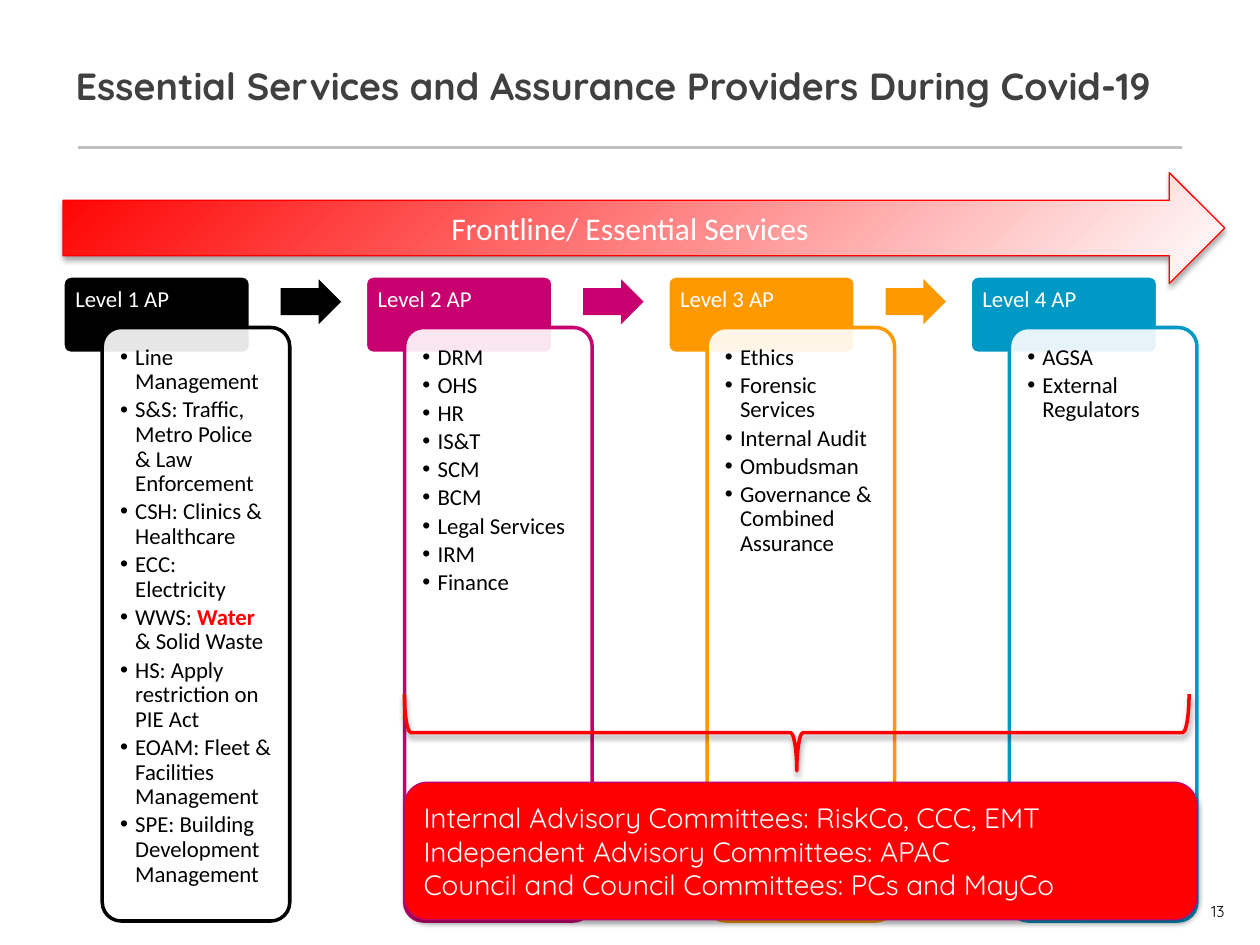
from dataclasses import dataclass

from pptx import Presentation
from pptx.dml.color import RGBColor
from pptx.enum.shapes import MSO_CONNECTOR, MSO_SHAPE
from pptx.enum.text import MSO_ANCHOR, MSO_AUTO_SIZE, PP_ALIGN
from pptx.oxml import parse_xml
from pptx.oxml.ns import nsdecls, qn
from pptx.util import Inches, Pt


@dataclass(frozen=True)
class Theme:
    body_font: str = "Calibri"
    display_font: str = "Quicksand"
    title_size: float = 21.6
    arrow_size: float = 18
    banner_size: float = 16
    body_size: float = 13
    number_size: float = 9
    white: str = "FFFFFF"
    black: str = "000000"
    title: str = "404040"
    rule: str = "BFBFBF"
    red: str = "FF0000"
    banner_line: str = "C4006D"
    levels: tuple = ("000000", "C8006F", "FF9900", "0098C5")


@dataclass(frozen=True)
class Box:
    left: float
    top: float
    width: float
    height: float

    def share(self, left, top, width, height):
        return Box(self.left + left * self.width, self.top + top * self.height,
                   width * self.width, height * self.height)

    def emu(self):
        return [Inches(side) for side in (self.left, self.top, self.width, self.height)]


THEME = Theme()
COLUMN_PITCH = 2.4
CARD_WIDTH = 0.62
LABEL_HEIGHT = 0.08
STEP_HEIGHT = 0.07

LEVELS = [
    ("Level 1 AP", [
        "Line Management",
        "S&S: Traffic, Metro Police & Law Enforcement",
        "CSH: Clinics & Healthcare",
        "ECC: Electricity",
        [("WWS: ", {}), ("Water ", {"color": THEME.red, "bold": True}), ("& Solid Waste", {})],
        "HS: Apply restriction on PIE Act",
        "EOAM: Fleet & Facilities Management",
        "SPE: Building Development Management",
    ]),
    ("Level 2 AP", ["DRM", "OHS", "HR", "IS&T", "SCM", "BCM", "Legal Services", "IRM", "Finance"]),
    ("Level 3 AP", ["Ethics", "Forensic Services", "Internal Audit", "Ombudsman",
                    "Governance & Combined Assurance"]),
    ("Level 4 AP", ["AGSA", "External Regulators"]),
]

COMMITTEES = [
    "Internal Advisory Committees: RiskCo, CCC, EMT",
    "Independent Advisory Committees: APAC",
    "Council and Council Committees: PCs and MayCo",
]


def add_bullet(paragraph):
    properties = paragraph._p.get_or_add_pPr()
    properties.set("marL", str(Inches(0.12)))
    properties.set("indent", str(-Inches(0.12)))
    properties.append(parse_xml(f'<a:buFont {nsdecls("a")} typeface="Arial"/>'))
    properties.append(parse_xml(f'<a:buChar {nsdecls("a")} char="•"/>'))


def write_text(shape, paragraphs, size, color, font=THEME.body_font, bold=False,
               align=PP_ALIGN.LEFT, anchor=MSO_ANCHOR.TOP, insets=(0.1, 0.05, 0.1, 0.05),
               bullets=False, line_spacing=None, space_after=None):
    frame = shape.text_frame
    frame.word_wrap = True
    frame.auto_size = MSO_AUTO_SIZE.NONE
    frame.vertical_anchor = anchor
    (frame.margin_left, frame.margin_top,
     frame.margin_right, frame.margin_bottom) = [Inches(inset) for inset in insets]
    for index, content in enumerate(paragraphs):
        paragraph = frame.add_paragraph() if index else frame.paragraphs[0]
        if bullets:
            add_bullet(paragraph)
        paragraph.alignment = align
        paragraph.line_spacing = line_spacing
        paragraph.space_after = space_after
        for text, changes in [(content, {})] if isinstance(content, str) else content:
            run = paragraph.add_run()
            run.text = text
            run.font.name = font
            run.font.size = Pt(size)
            run.font.bold = changes.get("bold", bold)
            run.font.color.rgb = RGBColor.from_string(changes.get("color", color))


def add_panel(slide, kind, box, fill=None, opacity=100, line=None, line_width=2,
              adjustments=(), shadow=None):
    shape = slide.shapes.add_shape(kind, *box.emu())
    shape.shadow.inherit = False
    for index, value in enumerate(adjustments):
        shape.adjustments[index] = value
    if fill:
        shape.fill.solid()
        shape.fill.fore_color.rgb = RGBColor.from_string(fill)
        if opacity < 100:
            color = shape._element.spPr.find(qn("a:solidFill"))[0]
            color.append(parse_xml(f'<a:alpha {nsdecls("a")} val="{opacity * 1000}"/>'))
    else:
        shape.fill.background()
    if line:
        shape.line.color.rgb = RGBColor.from_string(line)
        shape.line.width = Pt(line_width)
    else:
        shape.line.fill.background()
    if shadow:
        shape._element.spPr.find(qn("a:effectLst")).append(parse_xml(
            f'<a:outerShdw {nsdecls("a")} blurRad="{Pt(3.1)}" dist="{Pt(1.8)}" dir="5400000" '
            f'rotWithShape="0"><a:srgbClr val="{THEME.black}"><a:alpha val="{shadow * 1000}"/>'
            '</a:srgbClr></a:outerShdw>'))
    return shape


def add_heading(slide, box):
    title = slide.shapes.title
    title.left, title.top, title.width, title.height = box.share(0, 0, 1, 0.87).emu()
    write_text(title, ["Essential Services and Assurance Providers During Covid-19"],
               THEME.title_size, THEME.title, font=THEME.display_font, bold=True,
               anchor=MSO_ANCHOR.MIDDLE)
    inset = 0.12
    height = Inches(box.top + box.height)
    rule = slide.shapes.add_connector(MSO_CONNECTOR.STRAIGHT, Inches(box.left + inset), height,
                                      Inches(box.left + box.width - inset), height)
    rule.line.color.rgb = RGBColor.from_string(THEME.rule)
    rule.line.width = Pt(2)
    rule._element.spPr.append(parse_xml(f'<a:effectLst {nsdecls("a")}/>'))


def add_frontline_arrow(slide, box):
    arrow = add_panel(slide, MSO_SHAPE.RIGHT_ARROW, box, line=THEME.red, line_width=0.75,
                      shadow=35)
    properties = arrow._element.spPr
    properties.replace(properties.find(qn("a:noFill")), parse_xml(
        f'<a:gradFill {nsdecls("a")} rotWithShape="1"><a:gsLst>'
        f'<a:gs pos="0"><a:srgbClr val="{THEME.white}"/></a:gs>'
        f'<a:gs pos="100000"><a:srgbClr val="{THEME.red}"/></a:gs></a:gsLst>'
        '<a:path path="circle"><a:fillToRect l="100000" t="100000"/></a:path></a:gradFill>'))
    write_text(arrow, ["Frontline/ Essential Services"], THEME.arrow_size, THEME.white,
               align=PP_ALIGN.CENTER, anchor=MSO_ANCHOR.MIDDLE)


def add_level(slide, box, label, providers, color, has_next):
    tab = add_panel(slide, MSO_SHAPE.ROUNDED_RECTANGLE, box.share(0, 0, CARD_WIDTH, 0.12),
                    fill=color, line=THEME.white, adjustments=[0.1])
    write_text(tab, [label], THEME.body_size, THEME.white, line_spacing=0.9,
               insets=(0.08, 0.08, 0.08, 0.05))
    card = add_panel(slide, MSO_SHAPE.ROUNDED_RECTANGLE,
                     box.share(0.13, LABEL_HEIGHT, CARD_WIDTH, 1 - LABEL_HEIGHT),
                     fill=THEME.white, opacity=90, line=color, adjustments=[0.1])
    write_text(card, providers, THEME.body_size, THEME.black, bullets=True,
               line_spacing=0.9, space_after=Pt(2), insets=(0.1, 0.1, 0.1, 0.1))
    if has_next:
        add_panel(slide, MSO_SHAPE.RIGHT_ARROW,
                  box.share(0.72, (LABEL_HEIGHT - STEP_HEIGHT) / 2, 0.2, STEP_HEIGHT),
                  fill=color, adjustments=[0.6, 0.5])


def add_committees(slide, box):
    span = box.share(0, 0, 0.99, 0.34)
    upright = Box(span.left + (span.width - span.height) / 2,
                  span.top + (span.height - span.width) / 2, span.height, span.width)
    brace = add_panel(slide, MSO_SHAPE.RIGHT_BRACE, upright, line=THEME.red, shadow=38)
    brace.rotation = 90
    banner = add_panel(slide, MSO_SHAPE.ROUNDED_RECTANGLE, box.share(0, 0.39, 1, 0.61),
                       fill=THEME.red, line=THEME.banner_line, line_width=0.75, shadow=35)
    write_text(banner, COMMITTEES, THEME.banner_size, THEME.white, font=THEME.display_font,
               anchor=MSO_ANCHOR.MIDDLE)


def add_slide_number(slide, box):
    number = slide.shapes.add_textbox(*box.emu())
    write_text(number, ["13"], THEME.number_size, THEME.black, font=THEME.display_font,
               align=PP_ALIGN.RIGHT, anchor=MSO_ANCHOR.MIDDLE, insets=(0.08, 0.08, 0, 0))


def main():
    presentation = Presentation()
    presentation.slide_width, presentation.slide_height = Inches(10), Inches(7.5)
    slide = presentation.slides.add_slide(presentation.slide_layouts[5])
    add_heading(slide, Box(0.5, 0.3, 9, 0.87))
    add_slide_number(slide, Box(9.16, 7.07, 0.56, 0.25))
    add_frontline_arrow(slide, Box(0.5, 1.37, 9.22, 0.88))
    for index, ((label, providers), color) in enumerate(zip(LEVELS, THEME.levels)):
        add_level(slide, Box(0.5 + index * COLUMN_PITCH, 2.19, COLUMN_PITCH, 5.12),
                  label, providers, color, has_next=index < len(LEVELS) - 1)
    add_committees(slide, Box(3.21, 5.51, 6.29, 1.79))
    presentation.save("out.pptx")


if __name__ == "__main__":
    main()
